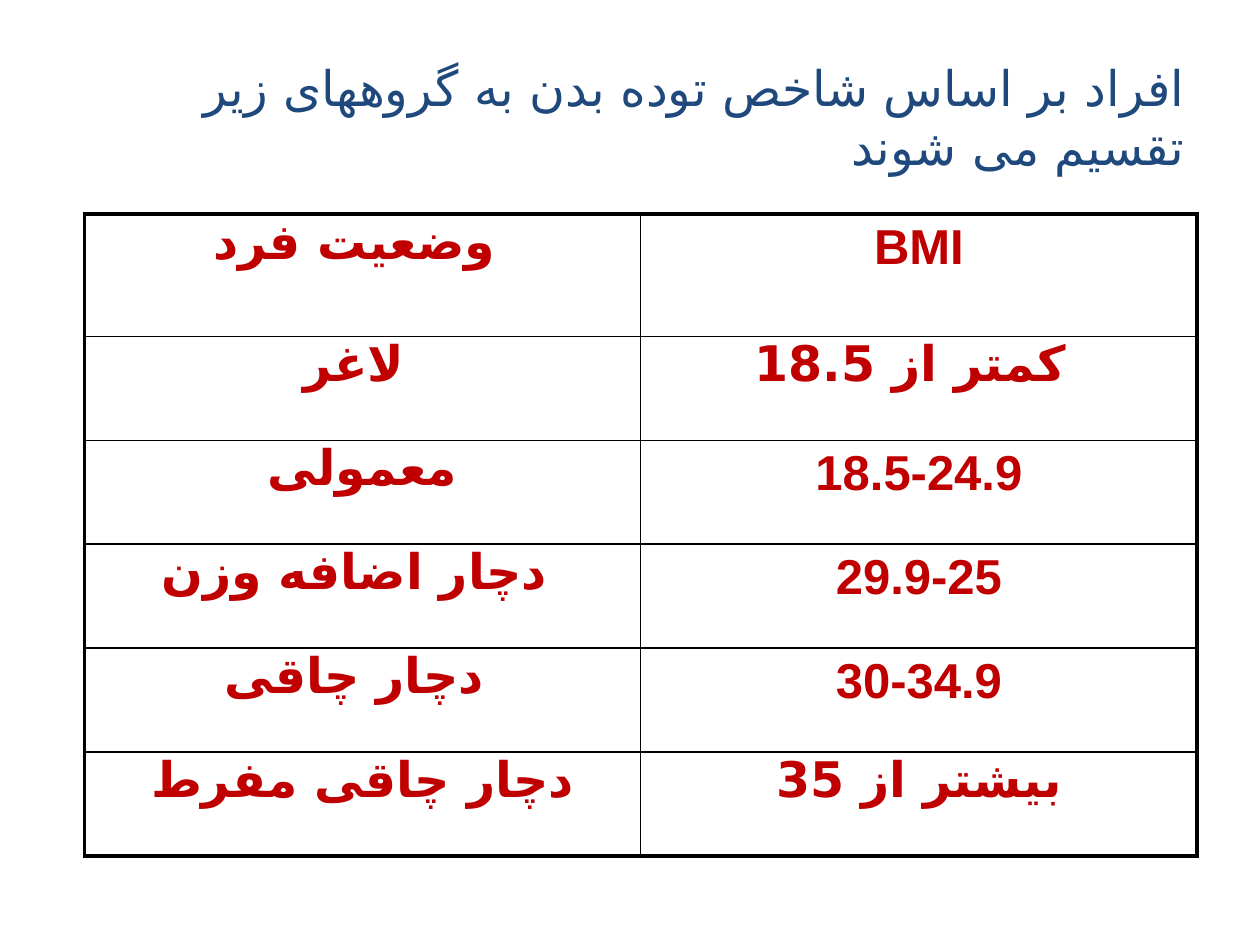
from pptx import Presentation
from pptx.dml.color import RGBColor
from pptx.enum.text import MSO_ANCHOR, PP_ALIGN
from pptx.oxml.ns import qn
from pptx.util import Inches, Pt
from lxml.etree import SubElement


def format_run(run, typeface, color, bold):
    for name, value in {"size": Pt(28), "name": typeface, "bold": bold}.items():
        setattr(run.font, name, value)
    run.font.color.rgb = RGBColor.from_string(color)
    SubElement(run.font._element, qn("a:cs"), typeface="DejaVu Sans")


def add_border(cell, side, width):
    line = SubElement(cell._tc.get_or_add_tcPr(), qn(f"a:ln{side}"), w=str(Pt(width)))
    SubElement(SubElement(line, qn("a:solidFill")), qn("a:srgbClr"), val="000000")


presentation = Presentation()
presentation.slide_width = Inches(10)
presentation.slide_height = Inches(7.5)
slide = presentation.slides.add_slide(presentation.slide_layouts[5])

# Title, written right to left
title = slide.shapes.title
frame_values = {"left": 0.5, "top": 0.3, "width": 9, "height": 1.25}
for name, value in frame_values.items():
    setattr(title, name, Inches(value))
title.text_frame.vertical_anchor = MSO_ANCHOR.MIDDLE
paragraph = title.text_frame.paragraphs[0]
paragraph.alignment = PP_ALIGN.RIGHT
paragraph._p.get_or_add_pPr().set("rtl", "1")
run = paragraph.add_run()
run.text = "افراد بر اساس شاخص توده بدن به گروههای زیر تقسیم می شوند "
format_run(run, "Calibri", "1F497D", False)

# Table of body mass index groups
groups = [
    ("وضعیت فرد ", "BMI"),
    ("لاغر ", "کمتر از 18.5 "),
    ("معمولی", "18.5-24.9"),
    ("دچار اضافه وزن ", "29.9-25"),
    ("دچار چاقی ", "30-34.9"),
    ("دچار چاقی مفرط", "بیشتر از 35"),
]
header_height, row_height = 0.97, 0.825
last_row, last_column = len(groups) - 1, 1
table = slide.shapes.add_table(
    len(groups), 2, Inches(0.67), Inches(1.7), Inches(8.83),
    Inches(header_height + last_row * row_height)).table
for name in ("first_row", "horz_banding"):
    setattr(table, name, False)
for row_index, group in enumerate(groups):
    table.rows[row_index].height = Inches(row_height if row_index else header_height)
    for column_index, text in enumerate(group):
        cell = table.cell(row_index, column_index)
        # Persian letters sit higher in the cell than Latin ones
        cell.margin_top = Inches(0.05 if text.isascii() else 0)
        paragraph = cell.text_frame.paragraphs[0]
        paragraph.alignment = PP_ALIGN.CENTER
        if text == "BMI":
            paragraph._p.get_or_add_pPr().set("rtl", "1")
        run = paragraph.add_run()
        run.text = text
        format_run(run, "Arial", "C00000", True)

        # Thick outer frame, thin inner lines
        outer_sides = {
            "L": column_index == 0,
            "R": column_index == last_column,
            "T": row_index == 0,
            "B": row_index == last_row,
        }
        for side, is_outer in outer_sides.items():
            add_border(cell, side, 2.25 if is_outer else 1)
        cell.fill.background()

presentation.save("out.pptx")
